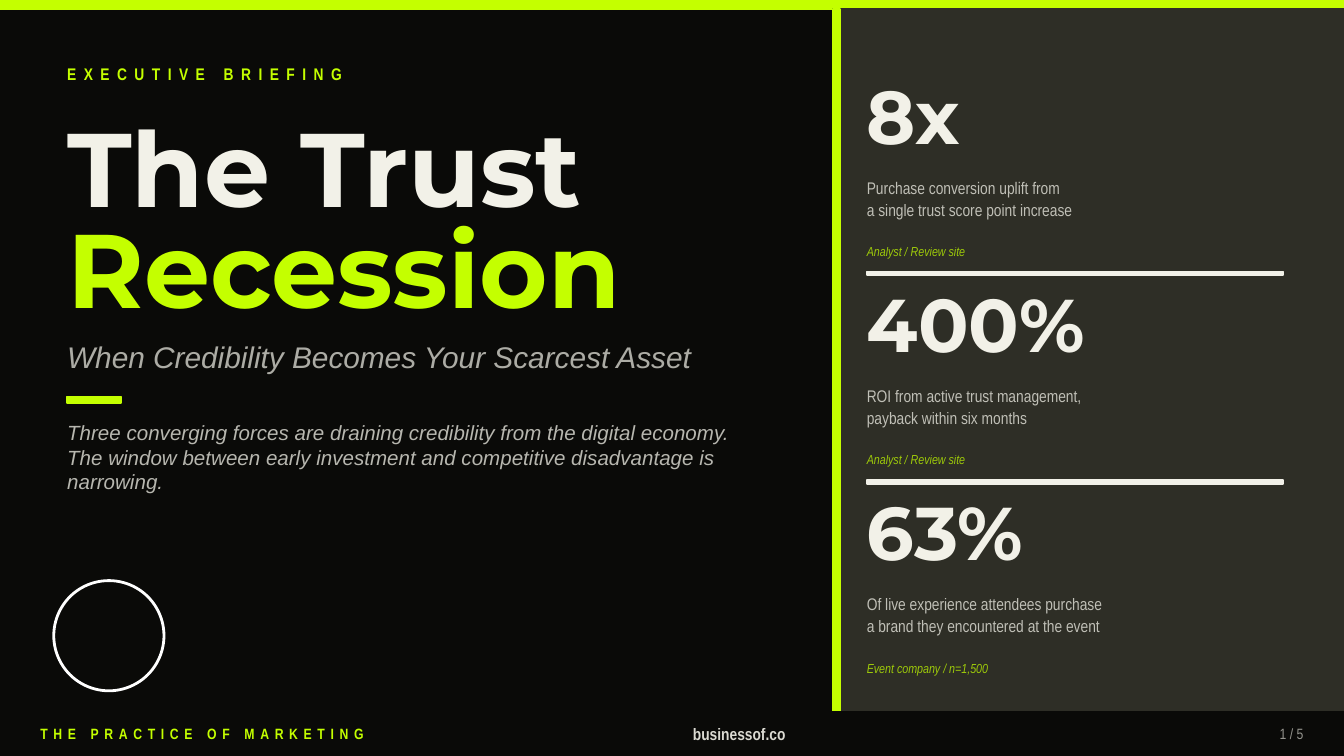
import pptx
import pptx.dml.color
import pptx.enum.shapes
import pptx.enum.text
import pptx.oxml
import pptx.oxml.ns
import pptx.util

SHAPE = pptx.enum.shapes.MSO_SHAPE
ALIGN = pptx.enum.text.PP_ALIGN
INK, LIME, CREAM, PANEL, WHITE = "0A0A08", "C4FF00", "F2F1E8", "2E2E26", "FFFFFF"
HEAD, BODY, NARROW = "Montserrat", "Arial", "Arial Narrow"


def rgb(color):
    return pptx.dml.color.RGBColor.from_string(color)


class Deck:
    """Style and current slide; lengths are cells of a grid 100 columns wide."""

    def __init__(self):
        self.prs = prs = pptx.Presentation()
        prs.slide_width = pptx.util.Inches(10)
        prs.slide_height = prs.slide_width * 9 // 16
        self.cell = prs.slide_width / 100

    def add_slide(self):
        self.s = self.prs.slides.add_slide(self.prs.slide_layouts[5])
        fill = self.s.background.fill
        fill.solid()
        fill.fore_color.rgb = rgb(INK)

    def box(self, *cells):
        return [round(c * self.cell) for c in cells]

    def shape(self, x, y, w, h, fill, kind=SHAPE.RECTANGLE, line=None, width=1):
        sp = self.s.shapes.add_shape(kind, *self.box(x, y, w, h))
        sp.shadow.inherit = False
        sp.fill.solid()
        sp.fill.fore_color.rgb = rgb(fill)
        sp.line.color.rgb = rgb(line or fill)
        sp.line.width = pptx.util.Pt(width)

    def frame(self, sp):
        """Give a text shape no margins, wrapping and a middle anchor."""
        tf = sp.text_frame
        tf.margin_left = tf.margin_right = tf.margin_top = tf.margin_bottom = 0
        tf.word_wrap = True
        tf.auto_size = pptx.enum.text.MSO_AUTO_SIZE.NONE
        tf.vertical_anchor = pptx.enum.text.MSO_ANCHOR.MIDDLE
        return tf

    def run(self, p, text, size, font, color, bold=False, italic=False,
            alpha=100, spacing=0):
        r = p.add_run()
        r.text = text
        f = r.font
        f.size, f.name, f.bold, f.italic = pptx.util.Pt(size), font, bold, italic
        f.color.rgb = rgb(color)
        rPr = r._r.get_or_add_rPr()
        if spacing:
            rPr.set("spc", str(spacing * 100))
        if alpha < 100:
            clr = rPr.find(".//" + pptx.oxml.ns.qn("a:srgbClr"))
            clr.append(pptx.oxml.parse_xml(
                f'<a:alpha {pptx.oxml.ns.nsdecls("a")} val="{alpha * 1000}"/>'))

    def title(self, x, y, w, h, lines, size, leading):
        """Fill the title placeholder with (text, colour) lines."""
        sp = self.s.shapes.title
        sp.left, sp.top, sp.width, sp.height = self.box(x, y, w, h)
        tf = self.frame(sp)
        for i, (text, color) in enumerate(lines):
            p = tf.add_paragraph() if i else tf.paragraphs[0]
            p.alignment = ALIGN.LEFT
            p.line_spacing = pptx.util.Pt(leading)
            self.run(p, text, size, HEAD, color, bold=True)

    def text(self, x, y, w, h, lines, size, font, color, align=ALIGN.LEFT,
             leading=None, **style):
        tf = self.frame(self.s.shapes.add_textbox(*self.box(x, y, w, h)))
        for i, line in enumerate(lines):
            p = tf.add_paragraph() if i else tf.paragraphs[0]
            p.alignment = align
            if leading:
                p.line_spacing = leading
            self.run(p, line, size, font, color, **style)

    def stat(self, x, y, figure, lines, source):
        self.text(x, y, 33, 7, [figure], 40, HEAD, CREAM, bold=True)
        self.text(x, y + 7.2, 33, 5, lines, 9, NARROW, CREAM, leading=1.1, alpha=75)
        self.text(x, y + 12.6, 33, 2.2, [source], 7, NARROW, LIME,
                  italic=True, alpha=75)


STATS = [
    ("8x", ["Purchase conversion uplift from", "a single trust score point increase"],
     "Analyst / Review site"),
    ("400%", ["ROI from active trust management,", "payback within six months"],
     "Analyst / Review site"),
    ("63%", ["Of live experience attendees purchase",
             "a brand they encountered at the event"],
     "Event company / n=1,500"),
]


def main():
    d = Deck()
    d.add_slide()

    # Headline side
    d.shape(0, 0, 100, 0.7, LIME)
    d.shape(4, 43.2, 8.2, 8.2, INK, SHAPE.OVAL, WHITE, 1.5)
    d.text(5, 4, 55, 3, ["EXECUTIVE BRIEFING"], 9, NARROW, LIME, bold=True, spacing=4)
    d.title(5, 9.5, 55, 15, [("The Trust", CREAM), ("Recession", LIME)], 56, 54)
    d.text(5, 24.5, 54, 4, ["When Credibility Becomes Your Scarcest Asset"],
           16, BODY, CREAM, italic=True, alpha=70)
    d.shape(5, 29.5, 4, 0.5, LIME)
    d.text(5, 31, 52, 6,
           ["Three converging forces are draining credibility from the digital "
            "economy. The window between early investment and competitive "
            "disadvantage is narrowing."],
           11, BODY, CREAM, italic=True, alpha=75)

    # Statistics panel
    left, top, pitch = 64.5, 5, 15.5
    d.shape(62, 0.7, 38, 52.3, PANEL)
    d.shape(62, 0.7, 0.5, 52.3, LIME)
    for i, stat in enumerate(STATS):
        y = top + i * pitch
        if i:
            d.shape(left, y - 0.3, 31, 0.3, CREAM)
        d.stat(left, y, *stat)

    # Footer
    d.shape(0, 53, 100, 3.25, INK)
    d.text(3, 53.2, 40, 2.8, ["THE PRACTICE OF MARKETING"], 8, NARROW, LIME,
           bold=True, spacing=3)
    d.text(38, 53.2, 34, 2.8, ["businessof.co"], 9, NARROW, CREAM, ALIGN.CENTER,
           bold=True, alpha=90)
    d.text(88, 53.2, 9, 2.8, ["1 / 5"], 8, NARROW, CREAM, ALIGN.RIGHT, alpha=60)

    d.prs.save("out.pptx")


if __name__ == "__main__":
    main()
